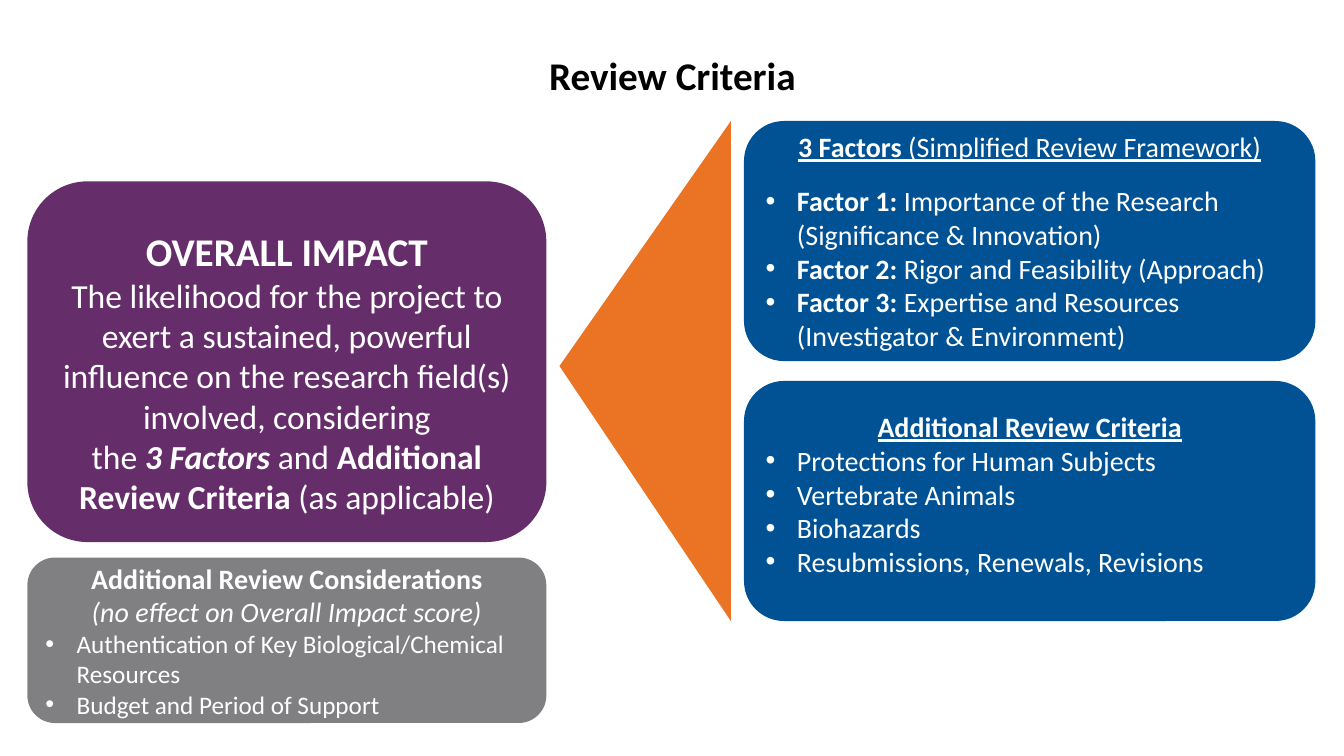
from dataclasses import dataclass

from lxml import etree
from pptx import Presentation
from pptx.dml.color import RGBColor
from pptx.enum.shapes import MSO_SHAPE
from pptx.enum.text import MSO_ANCHOR, PP_ALIGN
from pptx.oxml.ns import qn
from pptx.util import Cm, Pt


@dataclass(frozen=True)
class Theme:
    font: str = "Calibri"
    ink: str = "000000"
    paper: str = "FFFFFF"
    impact: str = "662D6B"
    criteria: str = "005294"
    considerations: str = "808083"
    pointer: str = "EA7324"
    heading: int = 28
    statement: int = 24
    body: int = 20
    detail: int = 18


class SlideBuilder:
    """Holds the theme and the slide being filled."""

    def __init__(self, slide, theme):
        self.slide, self.theme = slide, theme

    def add_paragraphs(self, frame, paragraphs, color, anchor=MSO_ANCHOR.MIDDLE):
        frame.word_wrap = True
        frame.vertical_anchor = anchor
        for index, content in enumerate(paragraphs):
            line = frame.paragraphs[0] if index == 0 else frame.add_paragraph()
            self.fill_paragraph(line, color, **content)

    def fill_paragraph(self, line, color, runs, size, bullet=False, **spacing):
        """Each run is (text, marks), with marks out of b, i and u."""
        line.alignment = PP_ALIGN.LEFT if bullet else PP_ALIGN.CENTER
        for name, value in spacing.items():
            setattr(line, name, value)
        if bullet:
            self.add_bullet(line)
        for text, marks in runs:
            run = line.add_run()
            run.text = text
            formats = {"name": self.theme.font, "size": Pt(size), "bold": "b" in marks,
                       "italic": "i" in marks, "underline": "u" in marks}
            for name, value in formats.items():
                setattr(run.font, name, value)
            run.font.color.rgb = RGBColor.from_string(color)

    def add_bullet(self, line):
        properties = line._p.get_or_add_pPr()
        indent = int(Cm(0.79))
        properties.set("marL", str(indent))
        properties.set("indent", str(-indent))
        etree.SubElement(properties, qn("a:buFont")).set("typeface", "Arial")
        etree.SubElement(properties, qn("a:buChar")).set("char", "•")

    def title(self, text, box):
        frame = self.slide.shapes.add_textbox(*map(Cm, box)).text_frame
        heading = {"runs": [(text, "b")], "size": self.theme.heading, "line_spacing": 0.9}
        self.add_paragraphs(frame, [heading], self.theme.ink)

    def shape(self, kind, box, fill):
        shape = self.slide.shapes.add_shape(kind, *map(Cm, box))
        shape.shadow.inherit = False
        shape.fill.solid()
        shape.fill.fore_color.rgb = RGBColor.from_string(fill)
        shape.line.fill.background()
        return shape

    def card(self, box, fill, paragraphs, anchor=MSO_ANCHOR.MIDDLE, bottom=0.13):
        frame = self.shape(MSO_SHAPE.ROUNDED_RECTANGLE, box, fill).text_frame
        frame.margin_bottom = Cm(bottom)
        self.add_paragraphs(frame, paragraphs, self.theme.paper, anchor)

    def pointer(self, box, fill, apex):
        triangle = self.shape(MSO_SHAPE.ISOSCELES_TRIANGLE, box, fill)
        triangle.rotation = 270
        triangle.adjustments[0] = apex


def main():
    deck = Presentation()
    deck.slide_width, deck.slide_height = Cm(33.87), Cm(19.05)
    theme = Theme()
    builder = SlideBuilder(deck.slides.add_slide(deck.slide_layouts[6]), theme)
    left, left_width = 0.69, 13.08
    right, right_width, right_height = 18.75, 14.4, 6.05

    builder.title("Review Criteria", (2.34, 1.02, 29.21, 1.9))

    # Overall impact
    statement = [
        [("The likelihood for the project to exert a sustained, powerful influence "
          "on the research field(s) involved, considering", "")],
        [("the ", ""), ("3 Factors ", "bi"), ("and ", ""),
         ("Additional Review Criteria ", "b"), ("(as applicable)", "")],
    ]
    builder.card(
        (left, 4.57, left_width, 9.09), theme.impact,
        [{"runs": [("OVERALL IMPACT", "b")], "size": theme.heading, "line_spacing": 1.5}]
        + [{"runs": runs, "size": theme.statement} for runs in statement],
        anchor=MSO_ANCHOR.TOP)

    # Three factors
    factors = ["Importance of the Research (Significance & Innovation)",
               "Rigor and Feasibility (Approach)",
               "Expertise and Resources (Investigator & Environment)"]
    builder.card(
        (right, 3.05, right_width, right_height), theme.criteria,
        [{"runs": [("3 Factors ", "bu"), ("(Simplified Review Framework)", "u")],
          "size": theme.body, "space_after": Pt(14.6)}]
        + [{"runs": [(f"Factor {number}: ", "b"), (factor, "")],
            "size": theme.body, "bullet": True}
           for number, factor in enumerate(factors, 1)])

    # Additional review criteria
    criteria = ["Protections for Human Subjects", "Vertebrate Animals", "Biohazards",
                "Resubmissions, Renewals, Revisions"]
    builder.card(
        (right, 9.6, right_width, right_height), theme.criteria,
        [{"runs": [("Additional Review Criteria", "bu")], "size": theme.body,
          "line_spacing": 1.5}]
        + [{"runs": [(item, "")], "size": theme.body, "bullet": True}
           for item in criteria],
        bottom=0.9)

    # Pointer from the criteria to the overall impact
    builder.pointer((9.96, 7.19, 12.6, 4.32), theme.pointer, apex=0.51)

    # Additional review considerations
    considerations = ["Authentication of Key Biological/Chemical Resources",
                      "Budget and Period of Support"]
    builder.card(
        (left, 14.05, left_width, 4.17), theme.considerations,
        [{"runs": [("Additional Review Considerations", "b")], "size": theme.body},
         {"runs": [("(no effect on Overall Impact score)", "i")], "size": theme.body}]
        + [{"runs": [(item, "")], "size": theme.detail, "bullet": True}
           for item in considerations])

    deck.save("out.pptx")


if __name__ == "__main__":
    main()
